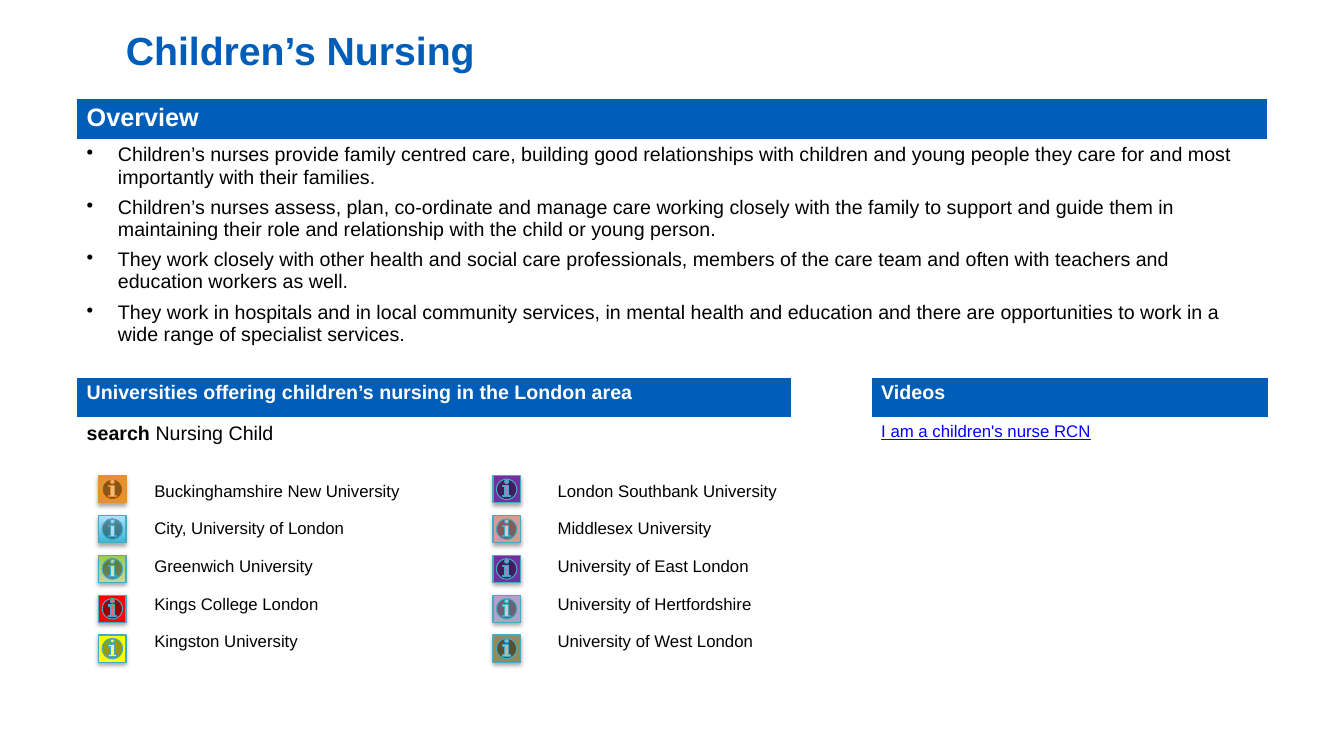
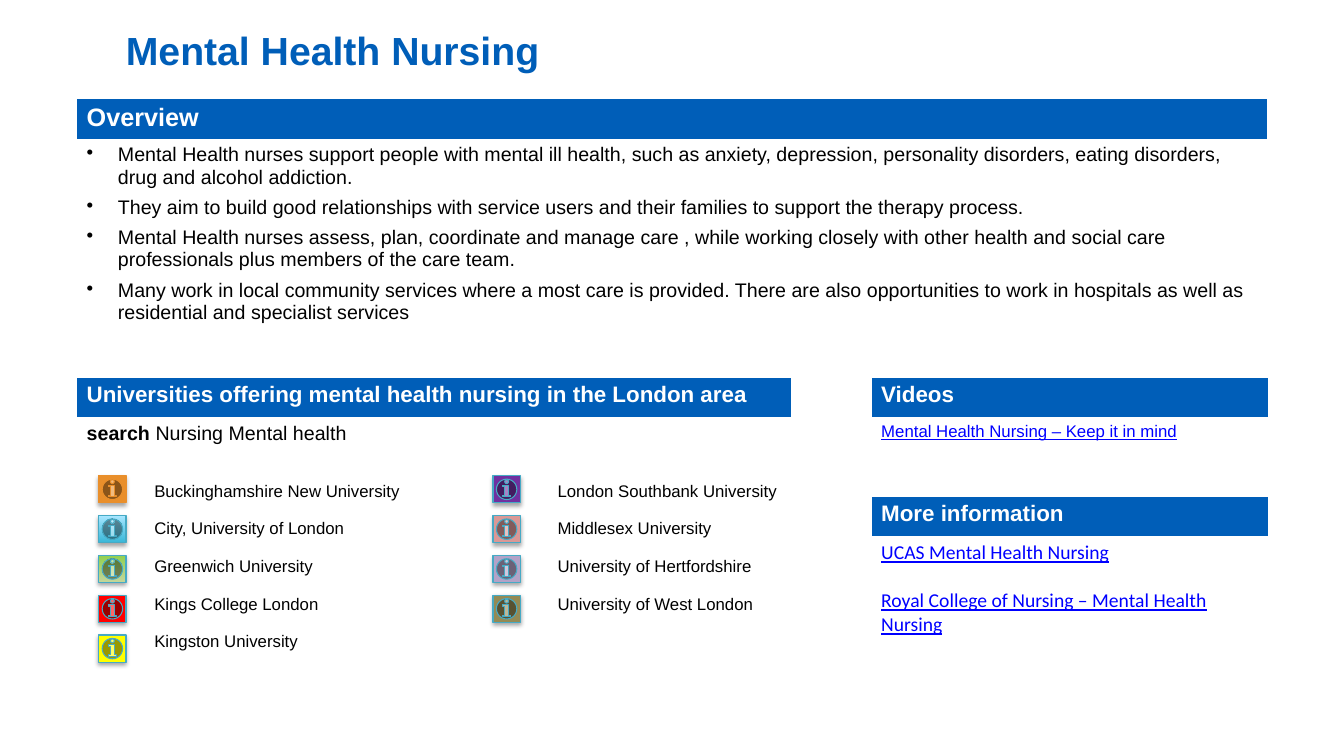
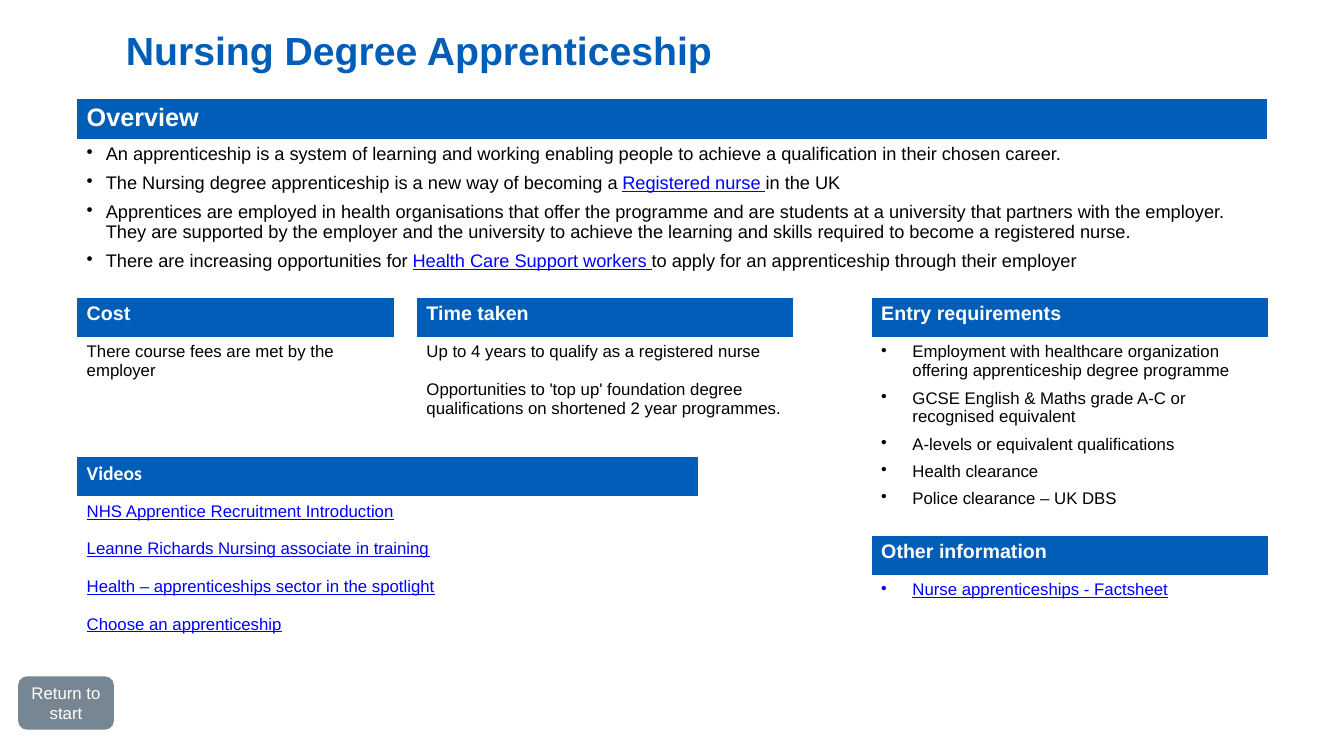
"""Builds three slides on nursing courses and apprenticeships."""
from itertools import zip_longest

from lxml.etree import SubElement
from pptx import Presentation
from pptx.dml.color import RGBColor
from pptx.enum.shapes import MSO_SHAPE as Shape
from pptx.enum.text import MSO_ANCHOR as Anchor, PP_ALIGN as Align
from pptx.oxml.ns import qn
from pptx.util import Inches, Pt

COLORS = {
    "brand": "005EB8", "white": "FFFFFF", "text": "000000", "link": "0000FF",
    "teal": "46AAC5", "gray": "768692", "orange": "E98F2B", "red": "FF0000",
    "yellow": "FFFF00", "purple": "7030A0", "pink": "DA9896",
    "lilac": "B3A2C7", "olive": "948A54", "sky": "A7E6FF", "blue": "39B7D8",
    "green": "92D050", "sage": "C3D69B",
}
LEFT, RIGHT, FULL, SIDE = 0.76, 8.64, 11.81, 3.94
HEADER = 0.4
BLANK_LINE = 13.4
LEFT_UNIVERSITIES = [
    ("Buckinghamshire New University", "orange"),
    ("City, University of London", ("blue", "sky")),
    ("Greenwich University", ("sage", "green")),
    ("Kings College London", "red"),
    ("Kingston University", "yellow"),
]
RIGHT_UNIVERSITIES = [
    ("London Southbank University", "purple"),
    ("Middlesex University", "pink"),
    ("University of East London", "purple"),
    ("University of Hertfordshire", "lilac"),
    ("University of West London", "olive"),
]


def rgb(name):
    return RGBColor.from_string(COLORS[name])


def link(text):
    return [(text, "link")]


class Deck:
    def __init__(self):
        self.show = Presentation()
        self.show.slide_width, self.show.slide_height = Inches(13.33), Inches(7.5)
        self.page = None

    def new_page(self, title):
        self.page = self.show.slides.add_slide(self.show.slide_layouts[6])
        box = self.page.shapes.add_textbox(
            Inches(1.15), Inches(0.2), Inches(11.02), Inches(0.59))
        box.text_frame.word_wrap = True
        box.text_frame.vertical_anchor = Anchor.MIDDLE
        self.add_text(box.text_frame, [title], 28, "brand", True)

    def add_text(self, frame, items, size, color="text", bold=False, font="Arial",
                 indent=0, after=0, spacing=None, tabs=()):
        for item in items:
            para = frame.add_paragraph() if frame.text else frame.paragraphs[0]
            props = para._p.get_or_add_pPr()
            if indent:
                props.set("marL", str(Inches(indent)))
                props.set("indent", str(-Inches(indent)))
                SubElement(props, qn("a:buChar"), char="•")
            if tabs:
                stops = SubElement(props, qn("a:tabLst"))
                for stop in tabs:
                    SubElement(stops, qn("a:tab"), pos=str(Inches(stop)), algn="l")
            para.space_after = Pt(after)
            if spacing:
                para.line_spacing = spacing
            para.font.name, para.font.size = font, Pt(size)
            para.font.bold, para.font.color.rgb = bold, rgb(color)
            spans = [(item, "plain")] if isinstance(item, str) else item
            for text, kind in spans:
                span = para.add_run()
                span.text = text
                target = para.font if len(spans) == 1 else span.font
                if kind == "link":
                    target.underline, target.color.rgb = True, rgb("link")
                elif kind == "bold":
                    target.bold = True

    def panel(self, heading, left, top, width, body, size=14, font="Arial", header=HEADER):
        table = self.page.shapes.add_table(
            2, 1, Inches(left), Inches(top), Inches(width), Inches(header + body)).table
        table.horz_banding = False
        for index, (height, color) in enumerate([(header, "brand"), (body, "white")]):
            table.rows[index].height = Inches(height)
            cell = table.cell(index, 0)
            cell.fill.solid()
            cell.fill.fore_color.rgb = rgb(color)
        self.add_text(table.cell(0, 0).text_frame, [heading], size, "white", True, font)
        return table.cell(1, 0).text_frame

    def overview(self, items, body, size=14, indent=0.31, header=HEADER):
        frame = self.panel("Overview", LEFT, 0.98, FULL, body, 18, header=header)
        self.add_text(frame, items, size, indent=indent, after=6)

    def info_button(self, left, top, color):
        shape = self.page.shapes.add_shape(
            Shape.ACTION_BUTTON_INFORMATION,
            Inches(left), Inches(top), Inches(0.27), Inches(0.27))
        if isinstance(color, tuple):
            shape.fill.gradient()
            shape.fill.gradient_angle = 90
            for stop, name in zip(shape.fill.gradient_stops, color):
                stop.color.rgb = rgb(name)
        else:
            shape.fill.solid()
            shape.fill.fore_color.rgb = rgb(color)
        shape.line.color.rgb = rgb("orange" if color == "orange" else "teal")
        shape.line.width = Pt(0.75)
        shape.shadow.inherit = False
        effects = shape._element.spPr.find(qn("a:effectLst"))
        shadow = SubElement(
            effects, qn("a:outerShdw"), blurRad=str(Pt(3.1)), dist=str(Pt(1.8)),
            dir="5400000", rotWithShape="0")
        tone = SubElement(shadow, qn("a:srgbClr"), val=COLORS["text"])
        SubElement(tone, qn("a:alpha"), val="35000")

    def universities(self, heading, size, search, right):
        frame = self.panel(heading, LEFT, 3.74, 7.09, 3.13, size)
        self.add_text(frame, [[("search", "bold"), (" " + search, "plain")]], 14,
                      after=BLANK_LINE)
        pairs = zip_longest(LEFT_UNIVERSITIES, right, fillvalue=("", None))
        lines = [f"\t{first}\t{second}".rstrip() for (first, _), (second, _) in pairs]
        self.add_text(frame, lines, 12, spacing=2.0, tabs=(0.67, 4.67))
        for left, column in [(0.98, LEFT_UNIVERSITIES), (4.89, right)]:
            for row, (_, color) in enumerate(column):
                self.info_button(left, 4.72 + row * 0.395, color)

    def return_button(self, text):
        shape = self.page.shapes.add_shape(
            Shape.ROUNDED_RECTANGLE, Inches(0.18), Inches(6.71), Inches(0.95), Inches(0.53))
        shape.shadow.inherit = False
        shape.fill.solid()
        shape.fill.fore_color.rgb = rgb("gray")
        shape.line.fill.background()
        frame = shape.text_frame
        frame.word_wrap = True
        frame.margin_left = frame.margin_right = Inches(0.05)
        frame.vertical_anchor = Anchor.MIDDLE
        self.add_text(frame, [text], 12, "white")
        frame.paragraphs[0].alignment = Align.CENTER


def children(deck):
    deck.new_page("Children’s Nursing")
    deck.overview([
        "Children’s nurses provide family centred care, building good relationships with "
        "children and young people they care for and most importantly with their families.",
        "Children’s nurses assess, plan, co-ordinate and manage care working closely with "
        "the family to support and guide them in maintaining their role and relationship "
        "with the child or young person.",
        "They work closely with other health and social care professionals, members of the "
        "care team and often with teachers and education workers as well.",
        "They work in hospitals and in local community services, in mental health and "
        "education and there are opportunities to work in a wide range of specialist services.",
    ], 2.23)
    videos = deck.panel("Videos", RIGHT, 3.74, SIDE, 0.41)
    deck.add_text(videos, [link("I am a children's nurse RCN")], 12)
    deck.universities("Universities offering children’s nursing in the London area", 14,
                      "Nursing Child", RIGHT_UNIVERSITIES)


def mental_health(deck):
    deck.new_page("Mental Health Nursing")
    deck.overview([
        "Mental Health nurses support people with mental ill health, such as anxiety, "
        "depression, personality disorders, eating disorders, drug and alcohol addiction.",
        "They aim to build good relationships with service users and their families to "
        "support the therapy process.",
        "Mental Health nurses assess, plan, coordinate and manage care , while working "
        "closely with other health and social care professionals plus members of the care team.",
        "Many work in local community services where a most care is provided. There are also "
        "opportunities to work in hospitals as well as residential and specialist services",
    ], 2.13)
    videos = deck.panel("Videos", RIGHT, 3.74, SIDE, 0.52, 16)
    deck.add_text(videos, [link("Mental Health Nursing – Keep it in mind")], 12)
    more = deck.panel("More information", RIGHT, 4.92, SIDE, 1.31, 16)
    deck.add_text(more, [
        link("UCAS Mental Health Nursing"),
        link("Royal College of Nursing – Mental Health Nursing"),
    ], 14, font="Calibri", after=17)
    deck.universities(
        "Universities offering mental health nursing in the London area", 16,
        "Nursing Mental health",
        [entry for entry in RIGHT_UNIVERSITIES if entry[0] != "University of East London"])


def apprenticeship(deck):
    deck.new_page("Nursing Degree Apprenticeship")
    deck.overview([
        "An apprenticeship is a system of learning and working enabling people to achieve a "
        "qualification in their chosen career.",
        [("The Nursing degree apprenticeship is a new way of becoming a ", "plain"),
         ("Registered nurse ", "link"), ("in the UK", "plain")],
        "Apprentices are employed in health organisations that offer the programme and are "
        "students at a university that partners with the employer. They are supported by the "
        "employer and the university to achieve the learning and skills required to become a "
        "registered nurse.",
        [("There are increasing opportunities for ", "plain"),
         ("Health Care Support workers ", "link"),
         ("to apply for an apprenticeship through their employer", "plain")],
    ], 1.56, 13, 0.19, 0.38)
    cost = deck.panel("Cost", LEFT, 2.95, 3.15, 0.93)
    deck.add_text(cost, ["There course fees are met by the employer"], 12)
    duration = deck.panel("Time taken", 4.13, 2.95, 3.74, 0.9)
    deck.add_text(duration, [
        "Up to 4 years to qualify as a registered nurse",
        "Opportunities to 'top up' foundation degree qualifications on shortened "
        "2 year programmes.",
    ], 12, after=BLANK_LINE)
    entry = deck.panel("Entry requirements", RIGHT, 2.95, SIDE, 1.83)
    deck.add_text(entry, [
        "Employment with healthcare organization offering apprenticeship degree programme",
        "GCSE English & Maths grade A-C or recognised equivalent",
        "A-levels or equivalent qualifications",
        "Health clearance",
        "Police clearance – UK DBS",
    ], 12, indent=0.31, after=6)
    videos = deck.panel("Videos", LEFT, 4.53, 6.17, 1.74, font="Calibri")
    deck.add_text(videos, [
        link("NHS Apprentice Recruitment Introduction"),
        link("Leanne Richards Nursing associate in training"),
        link("Health – apprenticeships sector in the spotlight"),
        link("Choose an apprenticeship"),
    ], 12, after=BLANK_LINE)
    other = deck.panel("Other information", RIGHT, 5.31, SIDE, 0.93)
    deck.add_text(other, [link("Nurse apprenticeships - Factsheet")], 12, indent=0.31)
    deck.return_button("Return to start")


def main():
    deck = Deck()
    for build in (children, mental_health, apprenticeship):
        build(deck)
    deck.show.save("out.pptx")


if __name__ == "__main__":
    main()
